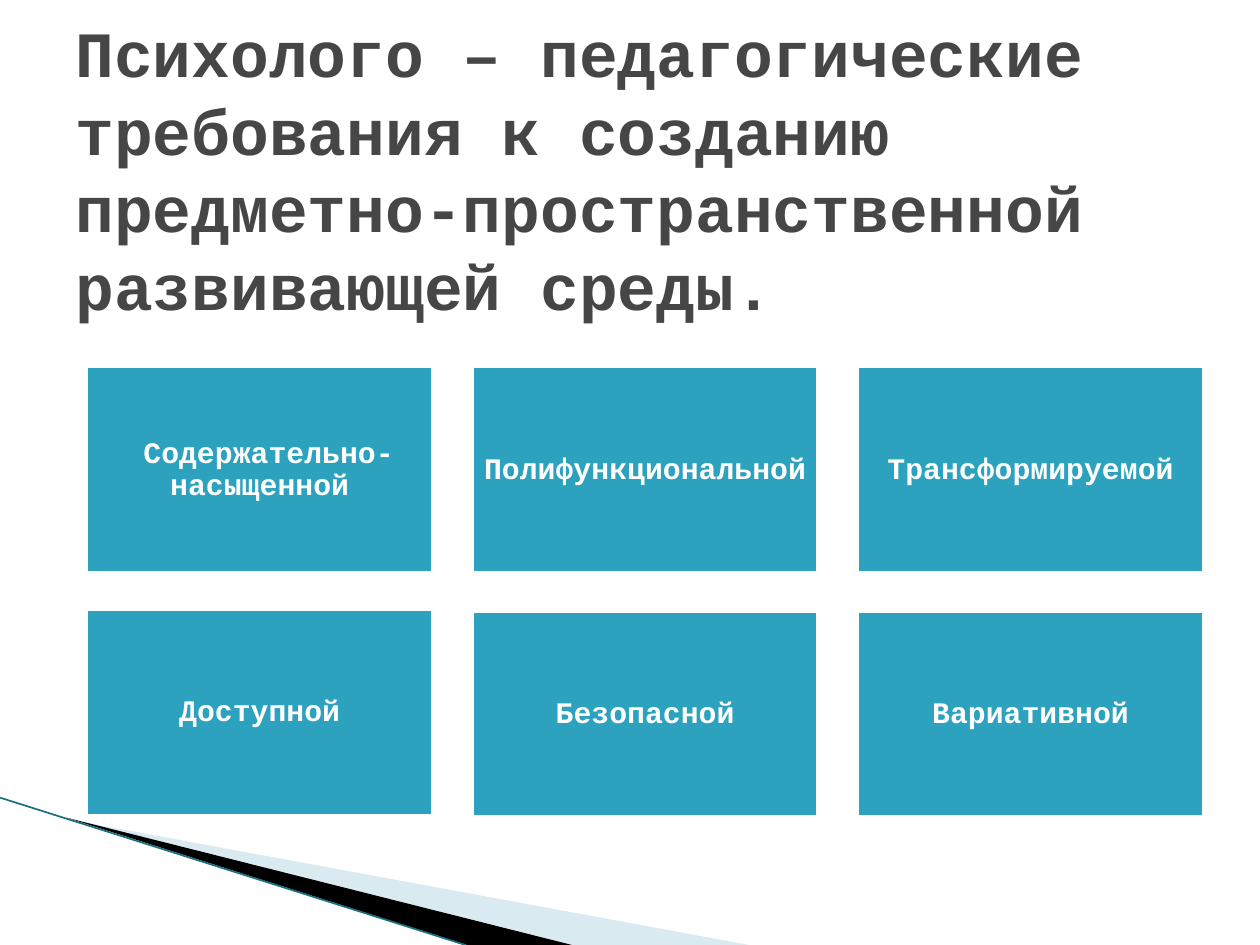
from lxml import etree
from pptx import Presentation
from pptx.dml.color import RGBColor
from pptx.enum.shapes import MSO_CONNECTOR, MSO_SHAPE
from pptx.enum.text import MSO_ANCHOR, PP_ALIGN
from pptx.oxml.ns import qn
from pptx.util import Pt

RECT, STRAIGHT = MSO_SHAPE.RECTANGLE, MSO_CONNECTOR.STRAIGHT
MIDDLE, LEFT, CENTER = MSO_ANCHOR.MIDDLE, PP_ALIGN.LEFT, PP_ALIGN.CENTER

TITLE = ("Психолого – педагогические требования к созданию "
         "предметно-пространственной развивающей среды.")
REQUIREMENTS = [
    [" Содержательно- насыщенной", "Полифункциональной", "Трансформируемой"],
    ["Доступной", "Безопасной", "Вариативной"],
]
WEDGES = [
    ([(39.6, 468.4), (428, 540), (328, 540)], "A0CBDC", 40),
    ([(38.2, 467.3), (327, 540), (267, 540)], "000000", 100),
]
EDGE = (0, 455.8, 266, 540)

TITLE_BOX = (36, 7.4, 648, 177.2)
CARD_W, CARD_H = 200.2, 120.1
GRID_X, GRID_Y = 48.3, 208.2
STEP_X, STEP_Y = 220.25, 139.7
ROW_START_SHIFT = [0, -0.9]

TITLE_FONT = {"name": "Courier New", "size": Pt(36.9), "bold": True}
CARD_FONT = {"name": "Courier New", "size": Pt(17), "bold": True}
TITLE_PARA = {"alignment": LEFT, "line_spacing": Pt(44.3)}
CARD_PARA = {"alignment": CENTER, "line_spacing": 0.9}


def rgb(value):
    return RGBColor.from_string(value)


def set_all(target, values):
    for name, value in values.items():
        setattr(target, name, value)


def fill_solid(sp, color, alpha=100):
    sp.shadow.inherit = False
    sp.fill.solid()
    sp.fill.fore_color.rgb = rgb(color)
    if alpha < 100:
        clr = sp.fill._xPr.find(qn("a:solidFill"))[0]
        etree.SubElement(clr, qn("a:alpha"), val=str(alpha * 1000))


def write(sp, text, para, font, color, margin_x, margin_y):
    tf = sp.text_frame
    set_all(tf, {"word_wrap": True, "vertical_anchor": MIDDLE,
                 "margin_left": Pt(margin_x), "margin_right": Pt(margin_x),
                 "margin_top": Pt(margin_y), "margin_bottom": Pt(margin_y)})
    p = tf.paragraphs[0]
    set_all(p, para)
    r = p.add_run()
    r.text = text
    set_all(r.font, font)
    r.font.color.rgb = rgb(color)


def add_wedge(s, points, color, alpha):
    corners = [(Pt(x), Pt(y)) for x, y in points]
    fb = s.shapes.build_freeform(*corners[0])
    fb.add_line_segments(corners[1:], close=True)
    sp = fb.convert_to_shape()
    fill_solid(sp, color, alpha)
    sp.line.fill.background()


def add_edge(s):
    line = s.shapes.add_connector(STRAIGHT, *map(Pt, EDGE))
    line.line.color.rgb = rgb("1B6F82")
    line.line.width = Pt(0.95)
    etree.SubElement(line._element.spPr, qn("a:effectLst"))


def add_card(s, text, x, y):
    sp = s.shapes.add_shape(RECT, *map(Pt, (x, y, CARD_W, CARD_H)))
    fill_solid(sp, "2DA2BF")
    sp.line.color.rgb = rgb("FFFFFF")
    sp.line.width = Pt(4.33)
    write(sp, text, CARD_PARA, CARD_FONT, "FFFFFF", 5.1, 5.1)


def main():
    prs = Presentation()
    prs.slide_width, prs.slide_height = Pt(720), Pt(540)
    s = prs.slides.add_slide(prs.slide_layouts[6])
    for wedge in WEDGES:
        add_wedge(s, *wedge)
    add_edge(s)
    for row, labels in enumerate(REQUIREMENTS):
        for col, text in enumerate(labels):
            shift = ROW_START_SHIFT[row] if col == 0 else 0
            add_card(s, text, GRID_X + col * STEP_X,
                     GRID_Y + row * STEP_Y + shift)
    title = s.shapes.add_textbox(*map(Pt, TITLE_BOX))
    write(title, TITLE, TITLE_PARA, TITLE_FONT, "464646", 7.2, 0)
    prs.save("out.pptx")


if __name__ == "__main__":
    main()
